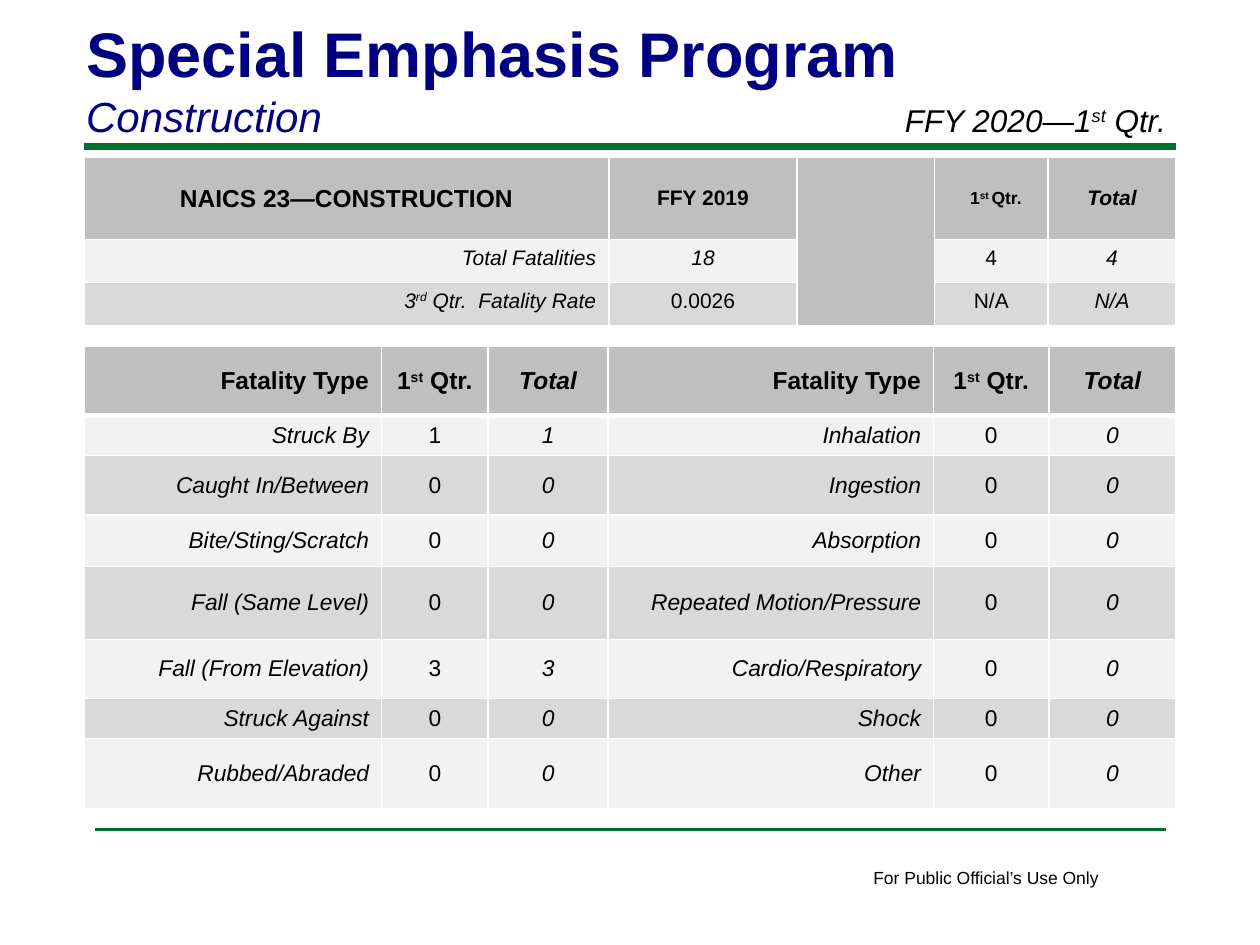
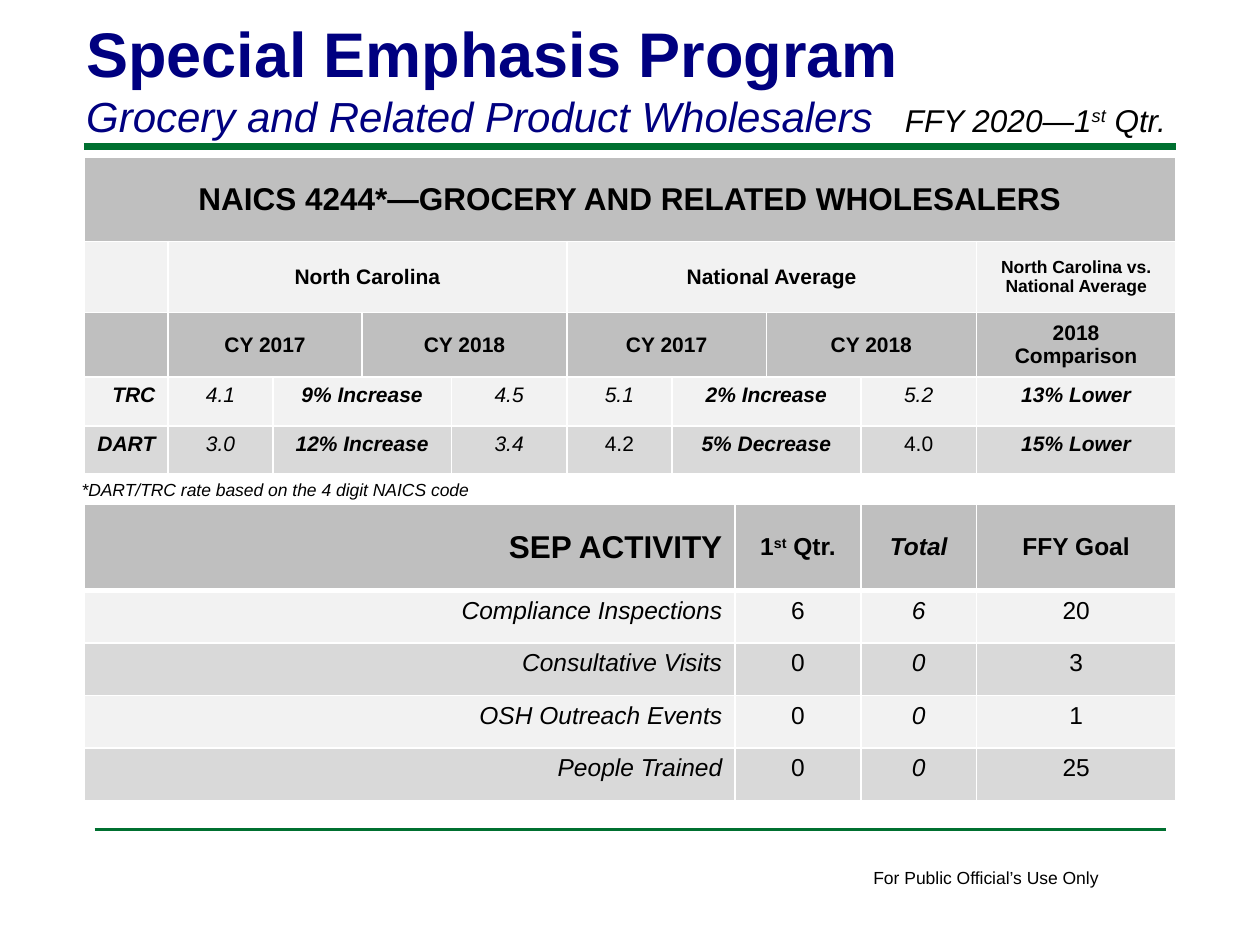
from dataclasses import dataclass
from typing import Optional

from lxml import etree
from pptx import Presentation
from pptx import util as u
from pptx.dml.color import RGBColor
from pptx.enum import shapes as s
from pptx.enum import text as t
from pptx.oxml import ns

LEFT, CENTER, RIGHT = t.PP_ALIGN.LEFT, t.PP_ALIGN.CENTER, t.PP_ALIGN.RIGHT
MIDDLE, TOP = t.MSO_ANCHOR.MIDDLE, t.MSO_ANCHOR.TOP


@dataclass(frozen=True)
class Theme:
    font: str = "Arial"
    navy: RGBColor = RGBColor(0x00, 0x00, 0x80)
    green: RGBColor = RGBColor(0x00, 0x70, 0x30)
    black: RGBColor = RGBColor(0x00, 0x00, 0x00)
    border: str = "FFFFFF"
    head: RGBColor = RGBColor(0xBF, 0xBF, 0xBF)
    light: RGBColor = RGBColor(0xF2, 0xF2, 0xF2)
    dark: RGBColor = RGBColor(0xD9, 0xD9, 0xD9)
    title: float = 36
    subtitle: float = 24
    large: float = 18
    medium: float = 14
    entry: float = 13
    body: float = 12
    small: float = 10


THEME = Theme()


@dataclass(frozen=True)
class Rule:
    left: float
    right: float
    y: float
    weight: float


@dataclass(frozen=True)
class Entry:
    text: str = ""
    size: float = THEME.body
    bold: bool = False
    italic: bool = False
    align: t.PP_ALIGN = CENTER
    across: int = 1
    down: int = 1


@dataclass(frozen=True)
class Row:
    height: float
    fill: RGBColor
    entries: list[Optional[Entry]]
    anchor: t.MSO_ANCHOR = TOP


@dataclass(frozen=True)
class Grid:
    top: float
    widths: list[float]
    rows: list[Row]
    head_rule: float = 1
    left: float = 48


RULES = [Rule(48, 672, 84, 4), Rule(54, 666, 474, 2)]


def write(frame, text: str, *, size: float, bold: bool = False, italic: bool = False,
          color: RGBColor = THEME.black, align: t.PP_ALIGN = LEFT) -> None:
    """Add a paragraph; text between carets is superscript."""
    para = frame.add_paragraph() if frame.text else frame.paragraphs[0]
    para.alignment = align
    for index, part in enumerate(text.split("^")):
        span = para.add_run()
        span.text = part
        font = span.font
        font.name, font.size = THEME.font, u.Pt(size)
        font.bold, font.italic = bold, italic
        font.color.rgb = color
        if index % 2:
            span._r.get_or_add_rPr().set("baseline", "30000")


def add_text(page, left: float, top: float, width: float, height: float,
             text: str, *, wrap: bool = True, **style) -> None:
    box = page.shapes.add_textbox(u.Pt(left), u.Pt(top), u.Pt(width), u.Pt(height))
    box.text_frame.word_wrap = wrap
    write(box.text_frame, text, **style)


def add_rule(page, rule: Rule) -> None:
    line = page.shapes.add_connector(s.MSO_CONNECTOR.STRAIGHT, u.Pt(rule.left), u.Pt(rule.y),
                                     u.Pt(rule.right), u.Pt(rule.y))
    line.line.color.rgb = THEME.green
    line.line.width = u.Pt(rule.weight)
    etree.SubElement(line._element.spPr, ns.qn("a:effectLst"))


def add_borders(cell, top: float, bottom: float) -> None:
    properties = cell._tc.get_or_add_tcPr()
    for side, weight in (("L", 1), ("R", 1), ("T", top), ("B", bottom)):
        edge = etree.SubElement(properties, ns.qn(f"a:ln{side}"), w=str(u.Pt(weight)))
        fill = etree.SubElement(edge, ns.qn("a:solidFill"))
        etree.SubElement(fill, ns.qn("a:srgbClr"), val=THEME.border)


def add_grid(page, grid: Grid):
    height = sum(row.height for row in grid.rows)
    table = page.shapes.add_table(len(grid.rows), len(grid.widths), u.Pt(grid.left), u.Pt(grid.top),
                                  u.Pt(sum(grid.widths)), u.Pt(height)).table
    table.first_row = table.horz_banding = False
    for column, width in zip(table.columns, grid.widths):
        column.width = u.Pt(width)
    for r, row in enumerate(grid.rows):
        table.rows[r].height = u.Pt(row.height)
        for c, entry in enumerate(row.entries):
            cell = table.cell(r, c)
            add_borders(cell, grid.head_rule if r == 1 else 1, grid.head_rule if r == 0 else 1)
            cell.fill.solid()
            cell.fill.fore_color.rgb = row.fill
            cell.vertical_anchor = row.anchor
            if entry and entry.text:
                write(cell.text_frame, entry.text, size=entry.size, bold=entry.bold,
                      italic=entry.italic, align=entry.align)
            else:
                cell.margin_top = cell.margin_bottom = 0
            if entry and entry.across * entry.down > 1:
                cell.merge(table.cell(r + entry.down - 1, c + entry.across - 1))
    return table


def head(text: str, size: float = THEME.medium, **style) -> Entry:
    return Entry(text, size, bold=True, **style)


def label(text: str, size: float) -> Entry:
    return Entry(text, size, italic=True, align=RIGHT)


def count_pair(value: str, size: float) -> list[Entry]:
    return [Entry(value, size), Entry(value, size, italic=True)]


def stripe(index: int) -> RGBColor:
    return THEME.dark if index % 2 else THEME.light


def add_page(deck, subtitle: str):
    page = deck.slides.add_slide(deck.slide_layouts[5])
    for rule in RULES:
        add_rule(page, rule)
    add_text(page, 492, 492, 144.5, 19.5, "For Public Official’s Use Only",
             wrap=False, size=THEME.small)
    title = page.shapes.title
    title.left, title.top, title.width, title.height = (u.Pt(n) for n in (42, 4.5, 594, 80))
    frame = title.text_frame
    frame.auto_size = t.MSO_AUTO_SIZE.NONE
    frame.vertical_anchor = MIDDLE
    write(frame, "Special Emphasis Program", size=THEME.title, bold=True, color=THEME.navy)
    write(frame, subtitle, size=THEME.subtitle, italic=True, color=THEME.navy)
    add_text(page, 510, 54, 180, 29, "FFY 2020—1^st^ Qtr.", size=THEME.large, italic=True)
    return page


def build_construction(deck) -> None:
    page = add_page(deck, "Construction")
    summary = add_grid(page, Grid(90, [300, 107.5, 78.5, 65, 73], [
        Row(47, THEME.head, [head("NAICS 23—CONSTRUCTION"), head("FFY 2019", THEME.body),
                             Entry(down=3), head("1^st ^Qtr.", THEME.small),
                             head("Total", THEME.body, italic=True)], MIDDLE),
        Row(24.5, THEME.light, [label("Total Fatalities", THEME.body), Entry("18", italic=True),
                                None, *count_pair("4", THEME.body)]),
        Row(24.5, THEME.dark, [label("3^rd^ Qtr.  Fatality Rate", THEME.body), Entry("0.0026"),
                               None, *count_pair("N/A", THEME.body)]),
    ]))
    summary.cell(0, 3).margin_left = u.Pt(12.5)

    fatalities = [
        (22.5, "Struck By", "1", "Inhalation", "0"),
        (34, "Caught In/Between", "0", "Ingestion", "0"),
        (29.5, "Bite/Sting/Scratch", "0", "Absorption", "0"),
        (41.5, "Fall (Same Level)", "0", "Repeated Motion/Pressure", "0"),
        (34, "Fall (From Elevation)", "3", "Cardio/Respiratory", "0"),
        (22.5, "Struck Against", "0", "Shock", "0"),
        (40, "Rubbed/Abraded", "0", "Other", "0"),
    ]
    heads = [head("Fatality Type", align=RIGHT), head("1^st^ Qtr."), head("Total", italic=True)]
    rows = [Row(39.5, THEME.head, heads * 2, MIDDLE)]
    for index, (height, first, first_count, second, second_count) in enumerate(fatalities):
        rows.append(Row(height, stripe(index), [
            label(first, THEME.entry), *count_pair(first_count, THEME.entry),
            label(second, THEME.entry), *count_pair(second_count, THEME.entry)], MIDDLE))
    add_grid(page, Grid(198, [170, 61, 68.5, 186, 66, 72.5], rows, head_rule=3))


def rate_row(height: float, fill: RGBColor, name: str, state: list[str],
             nation: list[str], comparison: str, slanted: bool) -> Row:
    entries: list[Optional[Entry]] = [head(name, THEME.body, italic=True, align=RIGHT)]
    for (before, change, after), italic in ((state, True), (nation, slanted)):
        entries += [Entry(before, italic=italic), head(change, THEME.body, italic=True, across=2),
                    None, Entry(after, italic=italic)]
    return Row(height, fill, entries + [head(comparison, THEME.body, italic=True)])


def build_grocery(deck) -> None:
    page = add_page(deck, "Grocery and Related Product Wholesalers")
    add_text(page, 39.5, 270, 242.5, 19.5, "*DART/TRC rate based on the 4 digit NAICS code",
             size=THEME.small, italic=True)

    activities = [("Compliance Inspections", "6", "20"), ("Consultative Visits", "0", "3"),
                  ("OSH Outreach Events", "0", "1"), ("People Trained", "0", "25")]
    rows = [Row(49.5, THEME.head, [head("SEP ACTIVITY", THEME.large, align=RIGHT),
                                   head("1^st^ Qtr."), head("Total", italic=True),
                                   head("FFY Goal")], MIDDLE)]
    for index, (activity, count, goal) in enumerate(activities):
        rows.append(Row(30, stripe(index), [label(activity, THEME.medium),
                                            *count_pair(count, THEME.medium),
                                            Entry(goal, THEME.medium)]))
    add_grid(page, Grid(288, [372, 72, 66, 114], rows, head_rule=3))

    regions = [Entry()]
    for region in ("North Carolina", "National Average"):
        regions += [head(region, THEME.body, across=4), None, None, None]
    years = [Entry()]
    for year in ("CY 2017", "CY 2018") * 2:
        years += [head(year, THEME.body, across=2), None]
    add_grid(page, Grid(90, [48, 60, 51, 51, 66, 60, 54, 54, 66, 114], [
        Row(48, THEME.head, [head("NAICS 4244*—GROCERY AND RELATED WHOLESALERS", THEME.large,
                                  across=10)] + [None] * 9, MIDDLE),
        Row(40.5, THEME.light,
            regions + [head("North Carolina vs. National Average", THEME.small)], MIDDLE),
        Row(37, THEME.head, years + [head("2018 Comparison", THEME.body)], MIDDLE),
        rate_row(28, THEME.light, "TRC", ["4.1", "9% Increase", "4.5"],
                 ["5.1", "2% Increase", "5.2"], "13% Lower", True),
        rate_row(27.5, THEME.dark, "DART", ["3.0", "12% Increase", "3.4"],
                 ["4.2", "5% Decrease", "4.0"], "15% Lower", False),
    ]))


def main() -> None:
    deck = Presentation()
    deck.slide_width, deck.slide_height = u.Pt(720), u.Pt(540)
    build_construction(deck)
    build_grocery(deck)
    deck.save("out.pptx")


if __name__ == "__main__":
    main()
